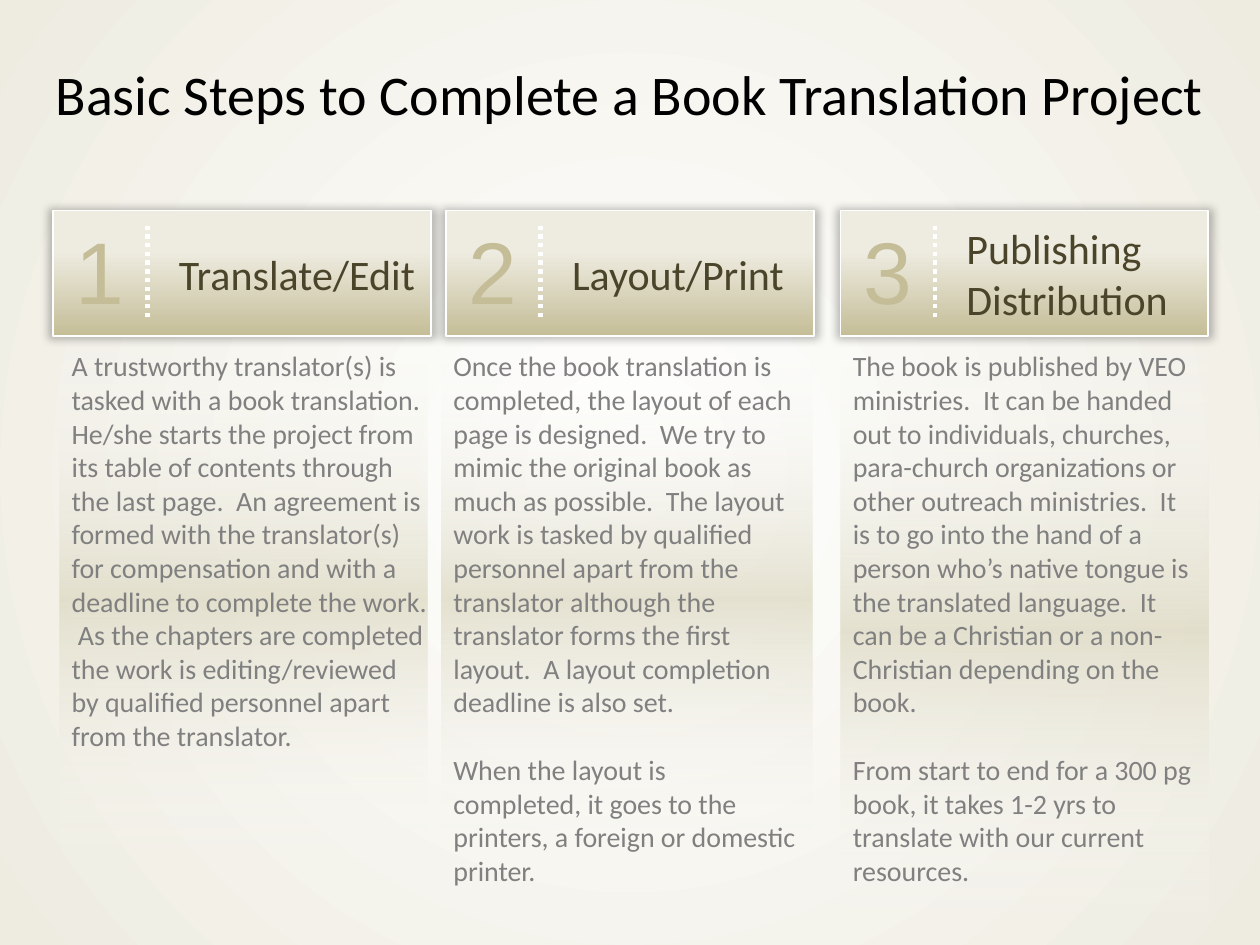
import pptx
import pptx.util
import pptx.dml.color
import pptx.enum.dml
import pptx.enum.shapes
import pptx.enum.text
import pptx.oxml
import pptx.oxml.ns

Inches, Pt = pptx.util.Inches, pptx.util.Pt
RGB = pptx.dml.color.RGBColor.from_string
ALIGN = pptx.enum.text.PP_ALIGN
ANCHOR = pptx.enum.text.MSO_ANCHOR
RECTANGLE = pptx.enum.shapes.MSO_SHAPE.RECTANGLE

TITLE = "Basic Steps to Complete a Book Translation Project"
STEPS = [
    {"heading": "Translate/Edit", "card": (0.42, 3), "panel": (0.47, 2.92, 4.17), "right_inset": 0,
     "body": ["A trustworthy translator(s) is tasked with a book translation.  He/she starts the project from its table of contents through the last page.  An agreement is formed with the translator(s) for compensation and with a deadline to complete the work.  As the chapters are completed the work is editing/reviewed by qualified personnel apart from the translator."]},
    {"heading": "Layout/Print", "card": (3.54, 2.92), "panel": (3.5, 2.95, 4.17), "right_inset": 0.1,
     "body": ["Once the book translation is completed, the layout of each page is designed.  We try to mimic the original book as much as possible.  The layout work is tasked by qualified personnel apart from the translator although the translator forms the first layout.  A layout completion deadline is also set.",
              "When the layout is completed, it goes to the printers, a foreign or domestic printer."]},
    {"heading": "Publishing Distribution", "card": (6.67, 2.92), "panel": (6.67, 2.92, 4.67), "right_inset": 0.1,
     "body": ["The book is published by VEO ministries.  It can be handed out to individuals, churches, para-church organizations or other outreach ministries.  It is to go into the hand of a person who’s native tongue is the translated language.  It can be a Christian or a non-Christian depending on the book.",
              "From start to end for a 300 pg book, it takes 1-2 yrs to translate with our current resources."]},
]
THEME = {
    "title": {"name": "Calibri", "size": Pt(32), "color": "000000"},
    "heading": {"name": "Calibri", "size": Pt(24), "color": "4A452A"},
    "number": {"name": "Arial", "size": Pt(50), "color": "C4BD97"},
    "body": {"name": "Calibri", "size": Pt(16), "color": "808080"},
    "white": "FFFFFF",
    "backdrop": [(0, "FFFFFF", 100), (100, "EEECE1", 100)],
    "card": [(32, "EEECE1", 100), (100, "C4BD97", 100)],
    "panel": [(0, "FFFFFF", 0), (50, "DDD9C3", 75), (100, "FFFFFF", 0)],
}
CARD_TOP, CARD_HEIGHT = 1.67, 1
NUMBER_WIDTH, NUMBER_HEIGHT = 0.75, 0.94
DIVIDER_TOP, DIVIDER_BOTTOM = 1.79, 2.54
DOWNWARD = '<a:lin ang="5400000" scaled="0"/>'
RADIAL = '<a:path path="circle"><a:fillToRect l="50000" t="50000" r="50000" b="50000"/></a:path>'


def element(tag, content="", attributes=""):
    return pptx.oxml.parse_xml(
        f'<a:{tag} {pptx.oxml.ns.nsdecls("a")} {attributes}>{content}</a:{tag}>')


def paint_gradient(owner, fill, stops, direction):
    fill.gradient()
    gradient = owner.find(".//" + pptx.oxml.ns.qn("a:gradFill"))
    marks = "".join(
        f'<a:gs pos="{place * 1000}"><a:srgbClr val="{color}">'
        f'<a:alpha val="{opacity * 1000}"/></a:srgbClr></a:gs>'
        for place, color, opacity in stops)
    gradient.getparent().replace(
        gradient, element("gradFill", f"<a:gsLst>{marks}</a:gsLst>{direction}", 'rotWithShape="1"'))


def write(box, texts, role, insets, align, anchor):
    frame = box.text_frame
    settings = dict(zip(("margin_left", "margin_top", "margin_right", "margin_bottom"),
                        map(Inches, insets)), word_wrap=True, vertical_anchor=anchor)
    for name, value in settings.items():
        setattr(frame, name, value)
    for index, text in enumerate(texts):
        para = frame.add_paragraph() if index else frame.paragraphs[0]
        para.alignment = align
        if index:
            para.space_before = Pt(19.5)
        span = para.add_run()
        span.text = text
        for name, value in THEME[role].items():
            if name == "color":
                span.font.color.rgb = RGB(value)
            else:
                setattr(span.font, name, value)


def add_gradient_box(page, bounds, stops):
    box = page.shapes.add_shape(RECTANGLE, *map(Inches, bounds))
    box.shadow.inherit = False
    paint_gradient(box._element, box.fill, stops, DOWNWARD)
    box.line.fill.background()
    return box


def add_panel(page, step):
    left, width, height = step["panel"]
    panel = add_gradient_box(page, (left, CARD_TOP + CARD_HEIGHT, width, height), THEME["panel"])
    write(panel, step["body"], "body", (0.1, 0.1, step["right_inset"], 0.05), ALIGN.LEFT, ANCHOR.TOP)


def add_card(page, number, step):
    left, width = step["card"]
    card = add_gradient_box(page, (left, CARD_TOP, width, CARD_HEIGHT), THEME["card"])
    card.line.color.rgb = RGB(THEME["white"])
    card.line.width = Pt(1)
    card._element.spPr.find(pptx.oxml.ns.qn("a:effectLst")).append(element(
        "outerShdw", '<a:srgbClr val="000000"><a:alpha val="25000"/></a:srgbClr>',
        'blurRad="63500" sx="102000" sy="102000" algn="ctr" rotWithShape="0"'))
    write(card, [step["heading"]], "heading", (1, 0.05, 0.1, 0.05), ALIGN.LEFT, ANCHOR.MIDDLE)

    label = page.shapes.add_textbox(*map(Inches, (left, CARD_TOP, NUMBER_WIDTH, NUMBER_HEIGHT)))
    write(label, [str(number)], "number", (0.1, 0.05, 0.1, 0.05), ALIGN.CENTER, ANCHOR.TOP)

    x = left + NUMBER_WIDTH
    divider = page.shapes.add_connector(
        pptx.enum.shapes.MSO_CONNECTOR.STRAIGHT, *map(Inches, (x, DIVIDER_TOP, x, DIVIDER_BOTTOM)))
    divider.line.color.rgb = RGB(THEME["white"])
    divider.line.width = Pt(2.5)
    divider.line.dash_style = pptx.enum.dml.MSO_LINE.ROUND_DOT
    divider._element.spPr.append(element("effectLst"))


def main():
    deck = pptx.Presentation()
    deck.slide_width, deck.slide_height = Inches(10), Inches(7.5)
    page = deck.slides.add_slide(deck.slide_layouts[5])
    paint_gradient(page._element, page.background.fill, THEME["backdrop"], RADIAL)

    title = page.shapes.title
    for name, value in {"left": 0, "top": 0.42, "width": 10, "height": 0.64}.items():
        setattr(title, name, Inches(value))
    write(title, [TITLE], "title", (0.1, 0.05, 0.1, 0.05), ALIGN.CENTER, ANCHOR.TOP)

    for step in STEPS:
        add_panel(page, step)
    for number, step in enumerate(STEPS, 1):
        add_card(page, number, step)
    deck.save("out.pptx")


if __name__ == "__main__":
    main()
